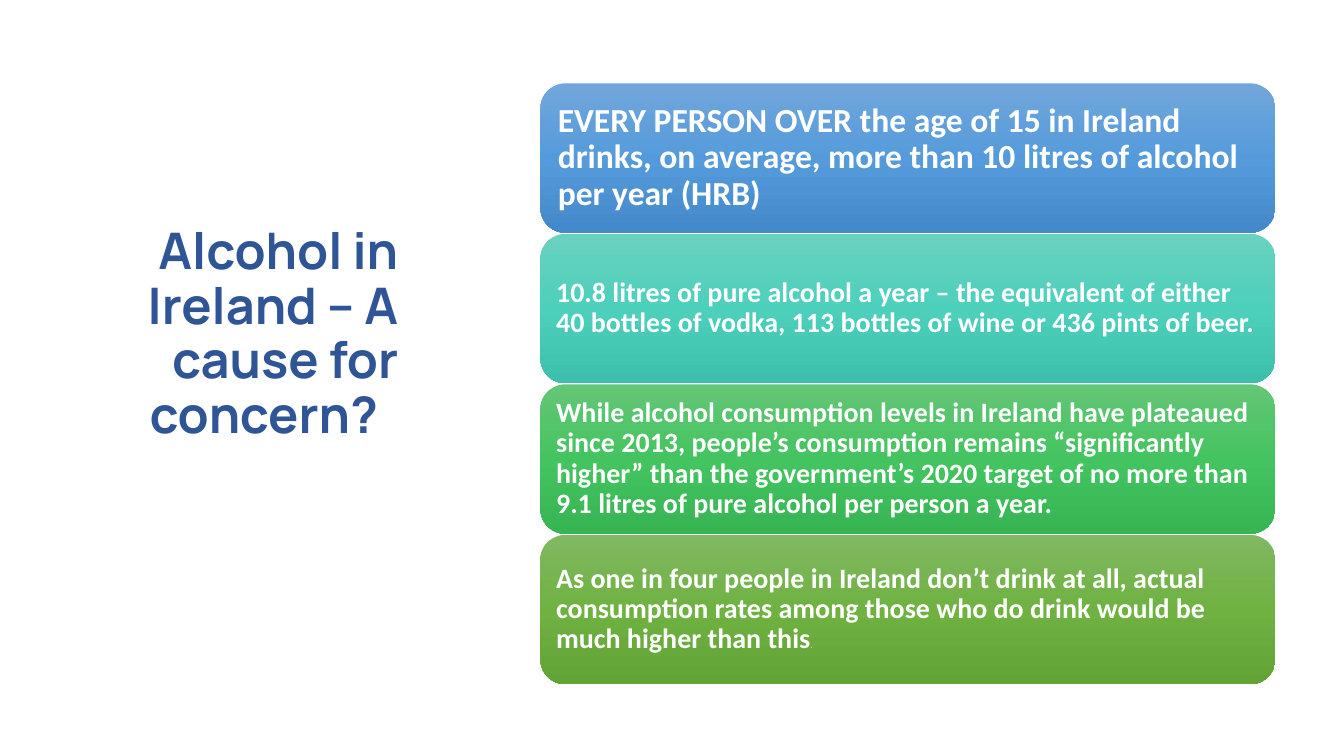
from copy import deepcopy

from pptx import Presentation
from pptx.dml.color import RGBColor
from pptx.enum.shapes import MSO_SHAPE as Shape
from pptx.enum.text import MSO_ANCHOR as Anchor, MSO_AUTO_SIZE as AutoSize, PP_ALIGN as Align
from pptx.oxml.ns import qn
from pptx.util import Cm, Pt

WHITE = RGBColor(0xFF, 0xFF, 0xFF)
NAVY = RGBColor(0x2F, 0x55, 0x97)
BLUES = (RGBColor(0x71, 0xA6, 0xDB), RGBColor(0x55, 0x9B, 0xDB), RGBColor(0x44, 0x8A, 0xCA))
TEALS = (RGBColor(0x6A, 0xD1, 0xC0), RGBColor(0x4C, 0xD0, 0xBC), RGBColor(0x3C, 0xC0, 0xAC))
GREENS = (RGBColor(0x64, 0xC6, 0x77), RGBColor(0x44, 0xC4, 0x60), RGBColor(0x36, 0xB5, 0x52))
OLIVES = (RGBColor(0x81, 0xB8, 0x61), RGBColor(0x6F, 0xB2, 0x42), RGBColor(0x62, 0xA3, 0x36))

TITLE = "Alcohol in Ireland – A cause for concern?  "
FACTS = [
    ("EVERY PERSON OVER the age of 15 in Ireland drinks, on average, "
     "more than 10 litres of alcohol per year (HRB)", 24, BLUES),
    ("10.8 litres of pure alcohol a year – the equivalent of either "
     "40 bottles of vodka, 113 bottles of wine or 436 pints of beer.", 20, TEALS),
    ("While alcohol consumption levels in Ireland have plateaued since 2013, "
     "people’s consumption remains “significantly higher” than the government’s "
     "2020 target of no more than 9.1 litres of pure alcohol per person a year.", 20, GREENS),
    ("As one in four people in Ireland don’t drink at all, actual consumption "
     "rates among those who do drink would be much higher than this", 20, OLIVES),
]


def style_paragraph(para, font_name, size, color):
    para.line_spacing = 0.9
    para.font.name = font_name
    para.font.size = Pt(size)
    para.font.bold = True
    para.font.color.rgb = color


def fill_gradient(shape, colors):
    shape.fill.gradient()
    shape.fill.gradient_angle = 270
    stop_list = shape._element.spPr.find(qn("a:gradFill")).find(qn("a:gsLst"))
    stop_list.insert(1, deepcopy(stop_list[0]))
    for stop, position, color in zip(shape.fill.gradient_stops, (0, 0.5, 1), colors):
        stop.position = position
        stop.color.rgb = color


def place_title(page, left, top, width, height):
    title = page.shapes.title
    title.left, title.top, title.width, title.height = left, top, width, height
    frame = title.text_frame
    frame.text = TITLE
    frame.word_wrap = True
    frame.auto_size = AutoSize.NONE
    frame.vertical_anchor = Anchor.BOTTOM
    para = frame.paragraphs[0]
    para.alignment = Align.RIGHT
    style_paragraph(para, "Manrope", 36, NAVY)


def add_fact(page, left, top, width, height, text, size, colors):
    box = page.shapes.add_shape(Shape.ROUNDED_RECTANGLE, left, top, width, height)
    box.shadow.inherit = False
    box.line.fill.background()
    fill_gradient(box, colors)
    frame = box.text_frame
    frame.word_wrap = True
    frame.vertical_anchor = Anchor.MIDDLE
    inset = Pt(size * 0.3)
    frame.margin_left = frame.margin_right = inset
    frame.margin_top = frame.margin_bottom = inset
    para = frame.paragraphs[0]
    para.alignment = Align.LEFT
    para.add_run().text = text
    style_paragraph(para, "Calibri", size, WHITE)
    return para


def add_fact_stack(page, left, top, width, height, gap):
    box_height = (height - gap * (len(FACTS) - 1)) // len(FACTS)
    for index, (text, size, colors) in enumerate(FACTS):
        box_top = top + index * (box_height + gap)
        para = add_fact(page, left, box_top, width, box_height, text, size, colors)
    full_stop = para.add_run()
    full_stop.text = "."
    full_stop.font.size = Pt(5)
    full_stop.font.bold = False


def main():
    deck = Presentation()
    deck.slide_width, deck.slide_height = Cm(33.87), Cm(19.05)
    page = deck.slides.add_slide(deck.slide_layouts[5])
    place_title(page, Cm(1.63), Cm(4.67), Cm(8.66), Cm(6.65))
    add_fact_stack(page, Cm(13.62), Cm(2.1), Cm(18.52), Cm(15.14), Cm(0.03))
    deck.save("out.pptx")


if __name__ == "__main__":
    main()
